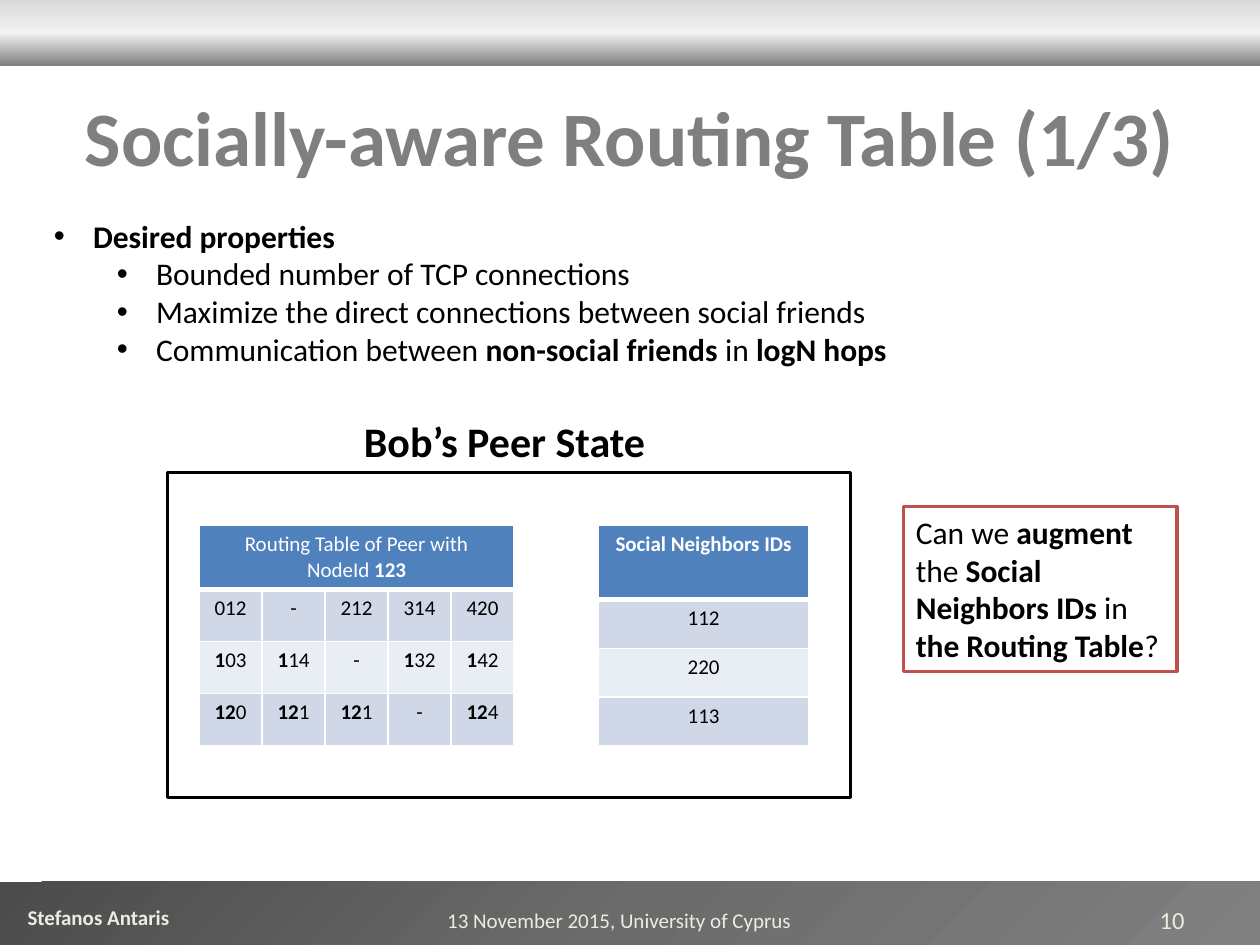
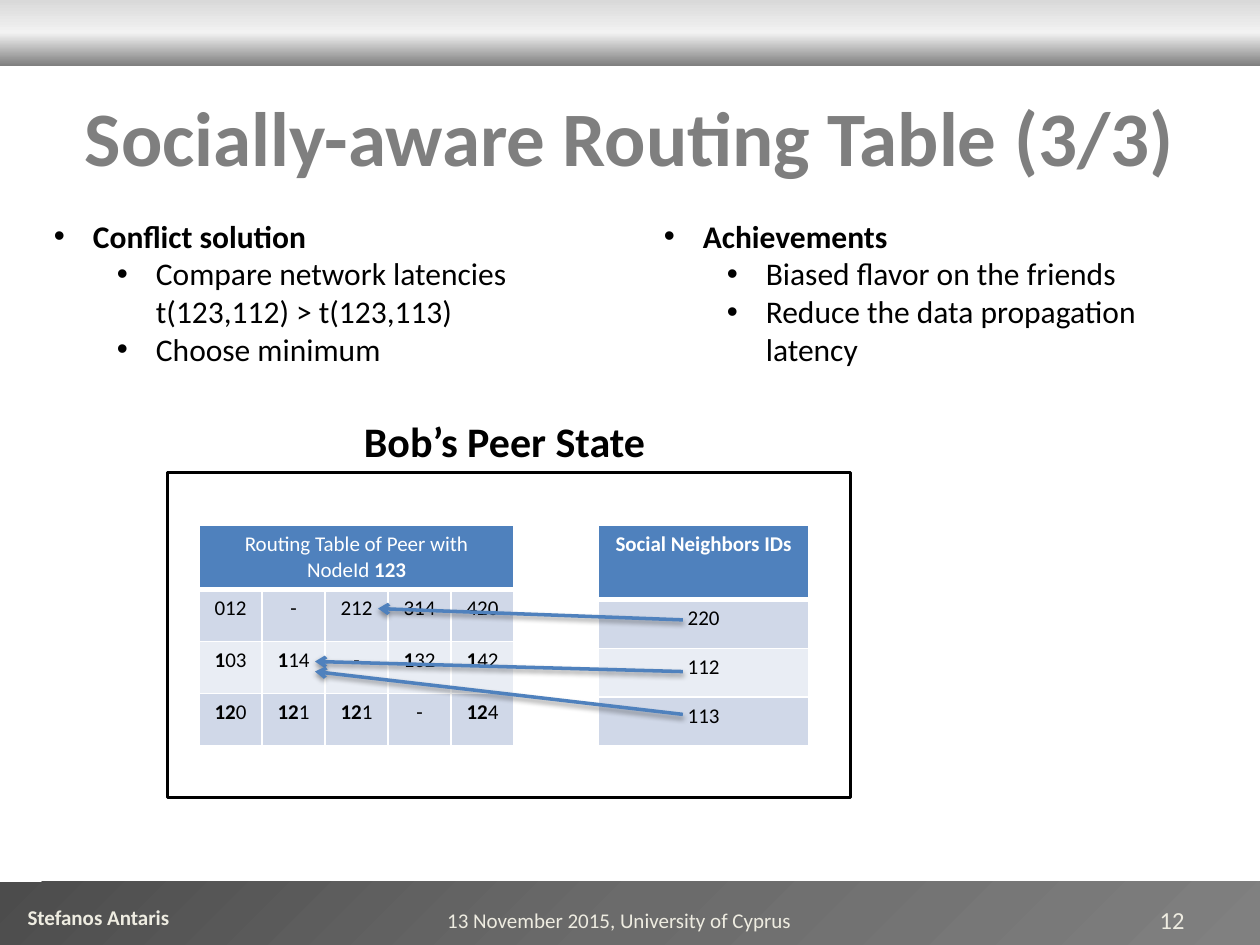
from copy import deepcopy
from dataclasses import dataclass

from lxml.etree import SubElement
from pptx import Presentation
from pptx.dml.color import RGBColor
from pptx.enum.shapes import MSO_CONNECTOR, MSO_SHAPE
from pptx.enum.text import MSO_ANCHOR, MSO_AUTO_SIZE, PP_ALIGN
from pptx.oxml.ns import qn
from pptx.util import Inches, Pt


@dataclass(frozen=True)
class Theme:
    font: str = "Calibri"
    black: str = "000000"
    white: str = "FFFFFF"
    title: str = "7F7F7F"
    footer: str = "EEECE1"
    blue: str = "4F81BD"
    red: str = "C0504D"
    row_shades: tuple = ("D0D8E8", "E9EDF4")
    header_band: tuple = ("D9D9D9", "F2F2F2", "808080")
    footer_band: tuple = ("4C4C4C", "6B6B6B", "808080")
    title_size: int = 44
    heading_size: int = 24
    body_size: int = 18
    number_size: int = 14
    small_size: int = 12


def color(value):
    return RGBColor.from_string(value)


def inches(*lengths):
    return [Inches(length) for length in lengths]


class SlideBuilder:
    def __init__(self, presentation, theme):
        self.presentation = presentation
        self.theme = theme
        self.slide = None

    def start(self, title, number):
        theme = self.theme
        self.slide = self.presentation.slides.add_slide(self.presentation.slide_layouts[6])
        self.band((0, 7, 10, 0.5), theme.footer_band, 45)
        self.band((0, 0, 10, 0.52), theme.header_band, 90)
        self.text((0.12, 7.13, 1.55, 0.3), "*Stefanos Antaris*", theme.small_size, theme.footer)
        self.text((0.5, 0.6, 9, 0.95), f"*{title}*", theme.title_size, theme.title,
                  PP_ALIGN.CENTER, MSO_ANCHOR.MIDDLE)
        self.text((3.08, 7.1, 3.67, 0.4), "13 November 2015, University of Cyprus",
                  theme.small_size, theme.footer, PP_ALIGN.CENTER, MSO_ANCHOR.MIDDLE)
        self.text((7.17, 7.1, 2.33, 0.4), number, theme.number_size, theme.footer,
                  PP_ALIGN.RIGHT, MSO_ANCHOR.MIDDLE)

    def fill_paragraph(self, paragraph, text, size, ink, align=PP_ALIGN.LEFT):
        paragraph.alignment = align
        paragraph.font.name = self.theme.font
        paragraph.font.size = Pt(size)
        paragraph.font.color.rgb = color(ink)
        for line_index, line in enumerate(text.split("\n")):
            if line_index:
                paragraph.add_line_break()
            for part_index, part in enumerate(line.split("*")):
                if part:
                    run = paragraph.add_run()
                    run.text = part
                    run.font.bold = part_index % 2 == 1

    def text_frame(self, box, anchor=MSO_ANCHOR.TOP):
        frame = self.slide.shapes.add_textbox(*inches(*box)).text_frame
        frame.word_wrap = True
        frame.vertical_anchor = anchor
        return frame

    def text(self, box, text, size, ink, align=PP_ALIGN.LEFT, anchor=MSO_ANCHOR.TOP):
        frame = self.text_frame(box, anchor)
        self.fill_paragraph(frame.paragraphs[0], text, size, ink, align)

    def bullets(self, box, heading, items):
        frame = self.text_frame(box)
        frame.auto_size = MSO_AUTO_SIZE.SHAPE_TO_FIT_TEXT
        for index, text in enumerate([f"*{heading}*", *items]):
            paragraph = frame.add_paragraph() if index else frame.paragraphs[0]
            paragraph.level = 1 if index else 0
            properties = paragraph._p.get_or_add_pPr()
            properties.set("marL", str(Inches(0.81 if index else 0.31)))
            properties.set("indent", str(Inches(-0.31)))
            SubElement(properties, qn("a:buFont"), typeface="Arial")
            SubElement(properties, qn("a:buChar"), char="•")
            self.fill_paragraph(paragraph, text, self.theme.body_size, self.theme.black)

    def rectangle(self, box):
        shape = self.slide.shapes.add_shape(MSO_SHAPE.RECTANGLE, *inches(*box))
        shape.shadow.inherit = False
        return shape

    def band(self, box, shades, angle):
        shape = self.rectangle(box)
        shape.line.fill.background()
        shape.fill.gradient()
        shape.fill.gradient_angle = 360 - angle
        stops = shape._element.spPr.find(".//" + qn("a:gsLst"))
        stops.insert(1, deepcopy(stops[0]))
        for index, (stop, shade) in enumerate(zip(shape.fill.gradient_stops, shades)):
            stop.position = index / 2
            stop.color.rgb = color(shade)

    def frame(self, box, outline):
        shape = self.rectangle(box)
        shape.fill.solid()
        shape.fill.fore_color.rgb = color(self.theme.white)
        shape.line.color.rgb = color(outline)
        shape.line.width = Pt(2)
        return shape

    def callout(self, box, text):
        frame = self.frame(box, self.theme.red).text_frame
        frame.word_wrap = True
        frame.vertical_anchor = MSO_ANCHOR.TOP
        self.fill_paragraph(frame.paragraphs[0], text, self.theme.body_size, self.theme.black)

    def borders(self, cell, top, bottom):
        properties = cell._tc.get_or_add_tcPr()
        for side, width in (("L", 1), ("R", 1), ("T", top), ("B", bottom)):
            line = SubElement(properties, qn(f"a:ln{side}"), w=str(Pt(width)))
            fill = SubElement(line, qn("a:solidFill"))
            SubElement(fill, qn("a:srgbClr"), val=self.theme.white)

    def table(self, box, header, rows, header_height):
        theme = self.theme
        column_count = len(rows[0])
        table = self.slide.shapes.add_table(len(rows) + 1, column_count, *inches(*box)).table
        table.first_row = table.horz_banding = False
        row_height = (box[3] - header_height) / len(rows)
        for column in table.columns:
            column.width = Inches(box[2] / column_count)
        grid = [[header] + [""] * (column_count - 1), *rows]
        for row_index, texts in enumerate(grid):
            table.rows[row_index].height = Inches(row_height if row_index else header_height)
            shade = theme.row_shades[(row_index - 1) % 2] if row_index else theme.blue
            ink = theme.black if row_index else theme.white
            for column_index, text in enumerate(texts):
                cell = table.cell(row_index, column_index)
                self.borders(cell, 3 if row_index == 1 else 1, 1 if row_index else 3)
                cell.fill.solid()
                cell.fill.fore_color.rgb = color(shade)
                self.fill_paragraph(cell.text_frame.paragraphs[0], text, theme.small_size, ink,
                                    PP_ALIGN.CENTER)
        if column_count > 1:
            table.cell(0, 0).merge(table.cell(0, column_count - 1))

    def arrow(self, start, end):
        connector = self.slide.shapes.add_connector(
            MSO_CONNECTOR.STRAIGHT, *inches(*start, *end))
        connector.line.color.rgb = color(self.theme.blue)
        connector.line.width = Pt(2)
        SubElement(connector.line._get_or_add_ln(), qn("a:tailEnd"), type="arrow")
        effects = SubElement(connector._element.spPr, qn("a:effectLst"))
        shadow = SubElement(effects, qn("a:outerShdw"), blurRad=str(Pt(3.1)),
                            dist=str(Pt(1.6)), dir="5400000", rotWithShape="0")
        shade = SubElement(shadow, qn("a:srgbClr"), val=self.theme.black)
        SubElement(shade, qn("a:alpha"), val="38000")

    def peer_state(self, neighbors):
        self.frame((1.33, 3.75, 5.42, 2.58), self.theme.black)
        self.table((4.75, 4.17, 1.67, 1.75), "*Social Neighbors IDs*",
                   [[neighbor] for neighbor in neighbors], 0.59)
        routes = [
            ["012", "-", "212", "314", "420"],
            ["*1*03", "*1*14", "-", "*1*32", "*1*42"],
            ["*12*0", "*12*1", "*12*1", "-", "*12*4"],
        ]
        self.table((1.58, 4.17, 2.5, 1.75), "Routing Table of Peer with NodeId *123*",
                   routes, 0.51)
        self.text((2.17, 3.25, 3.67, 0.5), "*Bob’s Peer State*", self.theme.heading_size,
                  self.theme.black, PP_ALIGN.CENTER)


def build_properties_slide(builder):
    builder.start("Socially-aware Routing Table (1/3)", "10")
    builder.peer_state(["112", "220", "113"])
    builder.bullets((0.33, 1.67, 9.42, 1.31), "Desired properties", [
        "Bounded number of TCP connections",
        "Maximize the direct connections between social friends",
        "Communication between *non-social friends* in *logN hops*",
    ])
    builder.callout((7.17, 4.02, 2.17, 1.31),
                    "Can we *augment* the *Social Neighbors IDs* in *the Routing Table*?")


def build_conflict_slide(builder):
    builder.start("Socially-aware Routing Table (3/3)", "12")
    builder.peer_state(["220", "112", "113"])
    builder.bullets((0.33, 1.67, 4.17, 1.31), "Conflict solution", [
        "Compare network latencies\nt(123,112) > t(123,113)",
        "Choose minimum",
    ])
    builder.bullets((5.17, 1.67, 4.17, 1.31), "Achievements", [
        "Biased flavor on the friends",
        "Reduce the data propagation latency",
    ])
    builder.arrow((5.42, 5.33), (2.5, 5.25))
    builder.arrow((5.42, 4.92), (3, 4.83))
    builder.arrow((5.42, 5.67), (2.5, 5.33))


def main():
    presentation = Presentation()
    presentation.slide_width, presentation.slide_height = inches(10, 7.5)
    builder = SlideBuilder(presentation, Theme())
    build_properties_slide(builder)
    build_conflict_slide(builder)
    presentation.save("out.pptx")


if __name__ == "__main__":
    main()
